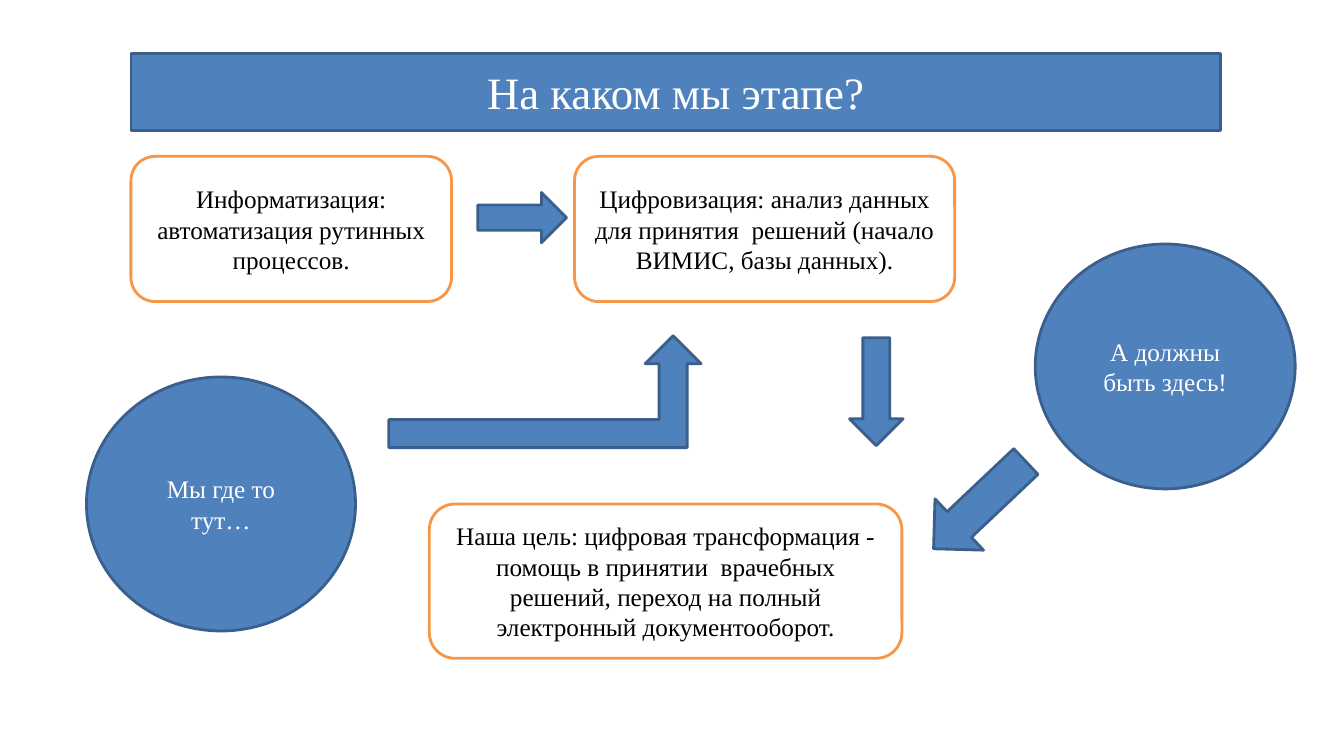
from pptx import Presentation
from pptx.dml.color import RGBColor
from pptx.enum.shapes import MSO_SHAPE
from pptx.enum.text import MSO_ANCHOR, MSO_AUTO_SIZE, PP_ALIGN
from pptx.util import Cm, Pt

FONT = "Times New Roman"
BLUE, NAVY, ORANGE = "4F81BD", "3A5F8C", "F79646"
WHITE, BLACK = "FFFFFF", "000000"

TITLE = ("На каком мы этапе?", (3.3, 1.35, 27.46, 1.93))
STAGES = [
    ("Информатизация: автоматизация рутинных процессов.",
     (3.3, 3.94, 8.08, 3.66)),
    ("Цифровизация: анализ данных для принятия  решений (начало ВИМИС, базы данных).",
     (14.48, 3.94, 9.58, 3.66)),
    ("Наша цель: цифровая трансформация - помощь в принятии  врачебных решений, "
     "переход на полный электронный документооборот.",
     (10.82, 12.7, 11.91, 3.89)),
]
POSITIONS = [
    ("Мы где то тут…", (2.18, 9.5, 6.78, 6.4)),
    ("А должны быть здесь!", (26.09, 6.15, 6.55, 6.17)),
]
ARROWS = [
    (MSO_SHAPE.RIGHT_ARROW, (12.04, 4.85, 2.24, 1.27), 0),
    (MSO_SHAPE.DOWN_ARROW, (21.41, 8.51, 1.35, 2.72), 0),
    (MSO_SHAPE.BENT_UP_ARROW, (9.8, 8.46, 7.87, 2.82), 0),
    (MSO_SHAPE.RIGHT_ARROW, (23.09, 11.84, 3.2, 1.78), 136.6),
]


def color(value):
    return RGBColor.from_string(value)


def paint(sp, fill, line):
    sp.fill.solid()
    sp.fill.fore_color.rgb = color(fill)
    sp.line.color.rgb = color(line)
    sp.line.width = Pt(2)


def add_text(sp, text, ink, size=18):
    tf = sp.text_frame
    tf.word_wrap = True
    tf.auto_size = MSO_AUTO_SIZE.NONE
    tf.vertical_anchor = MSO_ANCHOR.MIDDLE
    p = tf.paragraphs[0]
    p.alignment = PP_ALIGN.CENTER
    r = p.add_run()
    r.text = text
    r.font.name = FONT
    r.font.size = Pt(size)
    r.font.color.rgb = color(ink)


def add_figure(s, kind, box, fill=BLUE, line=NAVY):
    sp = s.shapes.add_shape(kind, *map(Cm, box))
    sp.shadow.inherit = False
    paint(sp, fill, line)
    return sp


def main():
    prs = Presentation()
    prs.slide_width, prs.slide_height = Cm(33.87), Cm(19.05)
    s = prs.slides.add_slide(prs.slide_layouts[5])

    text, box = TITLE
    title = s.shapes.title
    title.left, title.top, title.width, title.height = map(Cm, box)
    paint(title, BLUE, NAVY)
    add_text(title, text, WHITE, 32)

    for text, box in STAGES:
        sp = add_figure(s, MSO_SHAPE.ROUNDED_RECTANGLE, box, WHITE, ORANGE)
        add_text(sp, text, BLACK)
    for text, box in POSITIONS:
        add_text(add_figure(s, MSO_SHAPE.OVAL, box), text, WHITE)
    for kind, box, angle in ARROWS:
        add_figure(s, kind, box).rotation = angle

    prs.save("out.pptx")


if __name__ == "__main__":
    main()
